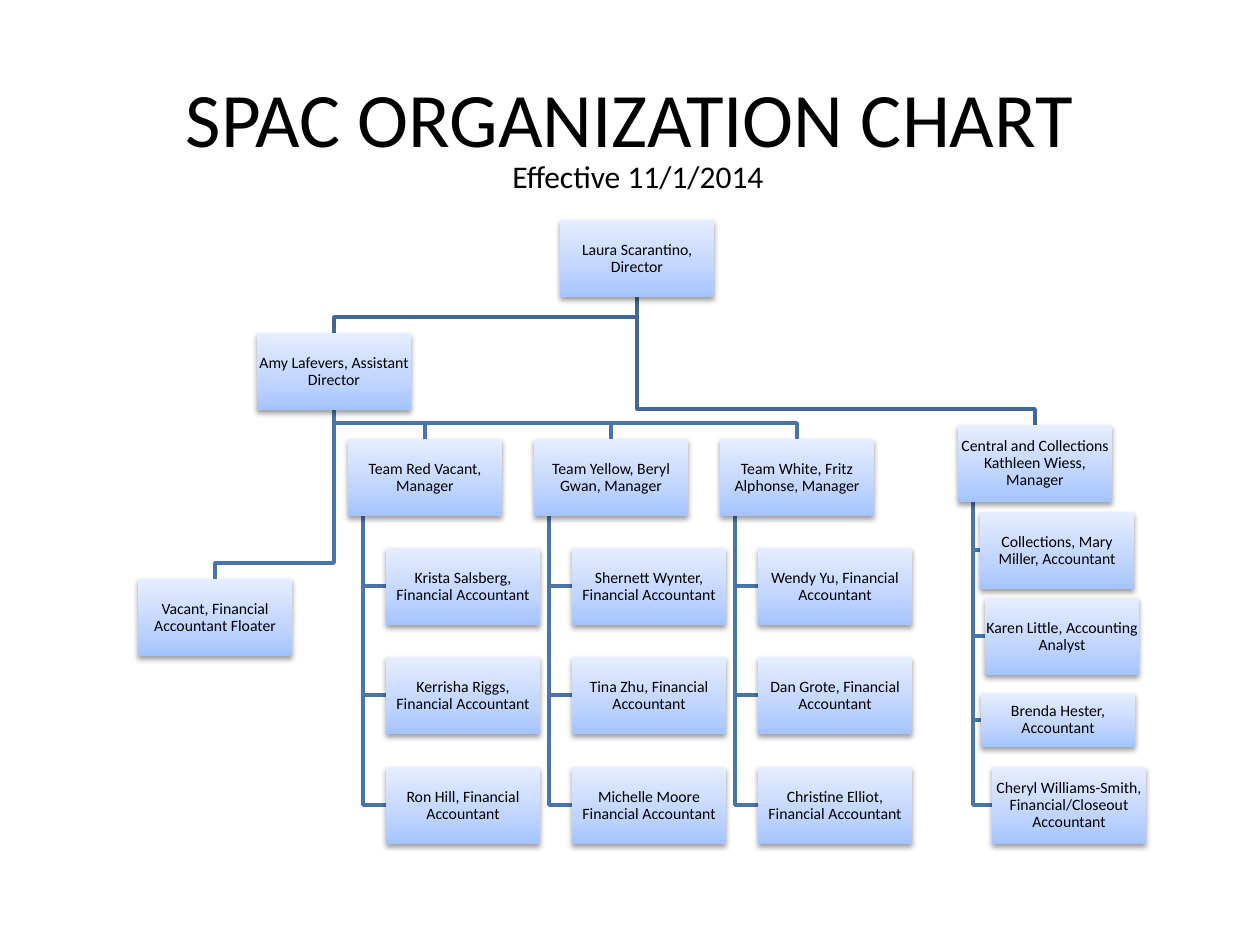
"""Builds the SPAC organization chart slide."""
from copy import deepcopy
from dataclasses import dataclass

from lxml import etree
from pptx import Presentation
from pptx import util as u
from pptx.dml.color import RGBColor
from pptx.enum import shapes, text
from pptx.oxml.ns import qn

PX = u.Inches(1) / 126
POST_WIDTH, POST_HEIGHT = 154, 77
BUS_GAP, RAIL_INSET = 16, 15
TEAM_LEFT, TEAM_TOP, TEAM_STEP = 348, 439, 186
MEMBER_INDENT, MEMBER_TOPS = 38, (548, 657, 767)
COLORS = {"text": "000000", "top_line": "3F6797", "line": "4875AC",
          "low": "A4C4FF", "middle": "BFD4FF", "high": "E6EEFF", "shadow": "000000"}
STOPS = ((0, "low"), (0.35, "middle"), (1, "high"))
SHADOW = {"blurRad": "40000", "dist": "20000", "dir": "5400000", "rotWithShape": "0"}
TEAMS = (
    ("Team Red Vacant, Manager", "Krista Salsberg, Financial Accountant",
     "Kerrisha Riggs, Financial Accountant", "Ron Hill, Financial Accountant"),
    ("Team Yellow, Beryl Gwan, Manager", "Shernett Wynter, Financial Accountant",
     "Tina Zhu, Financial Accountant", "Michelle Moore Financial Accountant"),
    ("Team White, Fritz Alphonse, Manager", "Wendy Yu, Financial Accountant",
     "Dan Grote, Financial Accountant", "Christine Elliot, Financial Accountant"),
)


@dataclass(frozen=True)
class Post:
    title: str
    left: int
    top: int
    height: int = POST_HEIGHT

    @property
    def center(self) -> int:
        return self.left + POST_WIDTH // 2

    @property
    def middle(self) -> int:
        return self.top + self.height // 2

    @property
    def bottom(self) -> int:
        return self.top + self.height


@dataclass(frozen=True)
class Link:
    parent: Post
    child: Post
    color: str = "line"
    from_rail: bool = False

    def points(self) -> list[tuple[int, int]]:
        if self.from_rail:
            rail = self.parent.left + RAIL_INSET
            return [(rail, self.parent.bottom), (rail, self.child.middle),
                    (self.child.left, self.child.middle)]
        bus = self.child.top - BUS_GAP
        return [(self.parent.center, self.parent.bottom), (self.parent.center, bus),
                (self.child.center, bus), (self.child.center, self.child.top)]


def px(value: int) -> int:
    return round(value * PX)


def color(name: str) -> RGBColor:
    return RGBColor.from_string(COLORS[name])


def set_all(target, values: dict) -> None:
    for name, value in values.items():
        setattr(target, name, value)


def write(box, words: str, size: int, frame_format: dict, para_format: dict) -> None:
    frame = box.text_frame
    set_all(frame, {"word_wrap": True, **frame_format})
    para = frame.paragraphs[0]
    set_all(para, para_format)
    span = para.add_run()
    span.text = words
    set_all(span.font, {"name": "Calibri", "size": u.Pt(size)})
    span.font.color.rgb = color("text")


def draw_heading(page, words: str, size: int, place: tuple[int, ...],
                 anchor: text.MSO_ANCHOR, align: text.PP_ALIGN) -> None:
    box = page.shapes.add_textbox(*map(px, place))
    write(box, words, size, {"vertical_anchor": anchor}, {"alignment": align})


def draw_link(page, link: Link) -> None:
    start, *rest = link.points()
    builder = page.shapes.build_freeform(*start, scale=PX)
    builder.add_line_segments(rest, close=False)
    elbow = builder.convert_to_shape()
    elbow.shadow.inherit = False
    elbow.fill.background()
    elbow.line.color.rgb = color(link.color)
    elbow.line.width = u.Pt(2)


def fill_gradient(box) -> None:
    box.fill.gradient()
    box.fill.gradient_angle = 90
    stop_list = box._element.spPr.find(qn("a:gradFill")).find(qn("a:gsLst"))
    stop_list.insert(1, deepcopy(stop_list[0]))
    for stop, (position, name) in zip(box.fill.gradient_stops, STOPS):
        stop.position = position
        stop.color.rgb = color(name)


def add_shadow(box) -> None:
    box.shadow.inherit = False
    effects = box._element.spPr.find(qn("a:effectLst"))
    shadow = etree.SubElement(effects, qn("a:outerShdw"), SHADOW)
    tint = etree.SubElement(shadow, qn("a:srgbClr"), val=COLORS["shadow"])
    etree.SubElement(tint, qn("a:alpha"), val="38000")


def draw_post(page, post: Post) -> None:
    place = map(px, (post.left, post.top, POST_WIDTH, post.height))
    box = page.shapes.add_shape(shapes.MSO_SHAPE.RECTANGLE, *place)
    fill_gradient(box)
    box.line.fill.background()
    add_shadow(box)
    margins = {f"margin_{side}": px(1) for side in ("left", "top", "right", "bottom")}
    write(box, post.title, 9, {"vertical_anchor": text.MSO_ANCHOR.MIDDLE, **margins},
          {"alignment": text.PP_ALIGN.CENTER, "line_spacing": 0.9})


def plan_chart() -> tuple[list[Post], list[Link]]:
    director = Post("Laura Scarantino, Director", 560, 220)
    assistant = Post("Amy Lafevers, Assistant Director", 257, 333)
    floater = Post("Vacant, Financial Accountant Floater", 138, 579)
    central = Post("Central and Collections Kathleen Wiess, Manager", 958, 425)
    central_staff = [
        Post("Collections, Mary Miller, Accountant", 980, 512),
        Post("Karen Little, Accounting Analyst", 985, 598),
        Post("Brenda Hester, Accountant", 981, 693, 54),
        Post("Cheryl Williams-Smith, Financial/Closeout Accountant", 992, 767),
    ]
    posts = [director, assistant, floater, central, *central_staff]
    links = [Link(central, person, from_rail=True) for person in central_staff]
    for column, (manager_title, *titles) in enumerate(TEAMS):
        left = TEAM_LEFT + column * TEAM_STEP
        manager = Post(manager_title, left, TEAM_TOP)
        members = [Post(title, left + MEMBER_INDENT, top)
                   for title, top in zip(titles, MEMBER_TOPS)]
        posts += [manager, *members]
        links += [Link(manager, member, from_rail=True) for member in members]
        links.append(Link(assistant, manager))
    links += [Link(assistant, floater), Link(director, central, "top_line"),
              Link(director, assistant, "top_line")]
    return posts, links


def main() -> None:
    deck = Presentation()
    set_all(deck, {"slide_width": px(1260), "slide_height": px(945)})
    page = deck.slides.add_slide(deck.slide_layouts[6])
    draw_heading(page, "SPAC ORGANIZATION CHART", 44, (63, 38, 1134, 157),
                 text.MSO_ANCHOR.MIDDLE, text.PP_ALIGN.CENTER)
    posts, links = plan_chart()
    for link in links:
        draw_link(page, link)
    for post in posts:
        draw_post(page, post)
    draw_heading(page, "Effective 11/1/2014", 18, (500, 151, 331, 50),
                 text.MSO_ANCHOR.TOP, text.PP_ALIGN.LEFT)
    deck.save("out.pptx")


if __name__ == "__main__":
    main()
